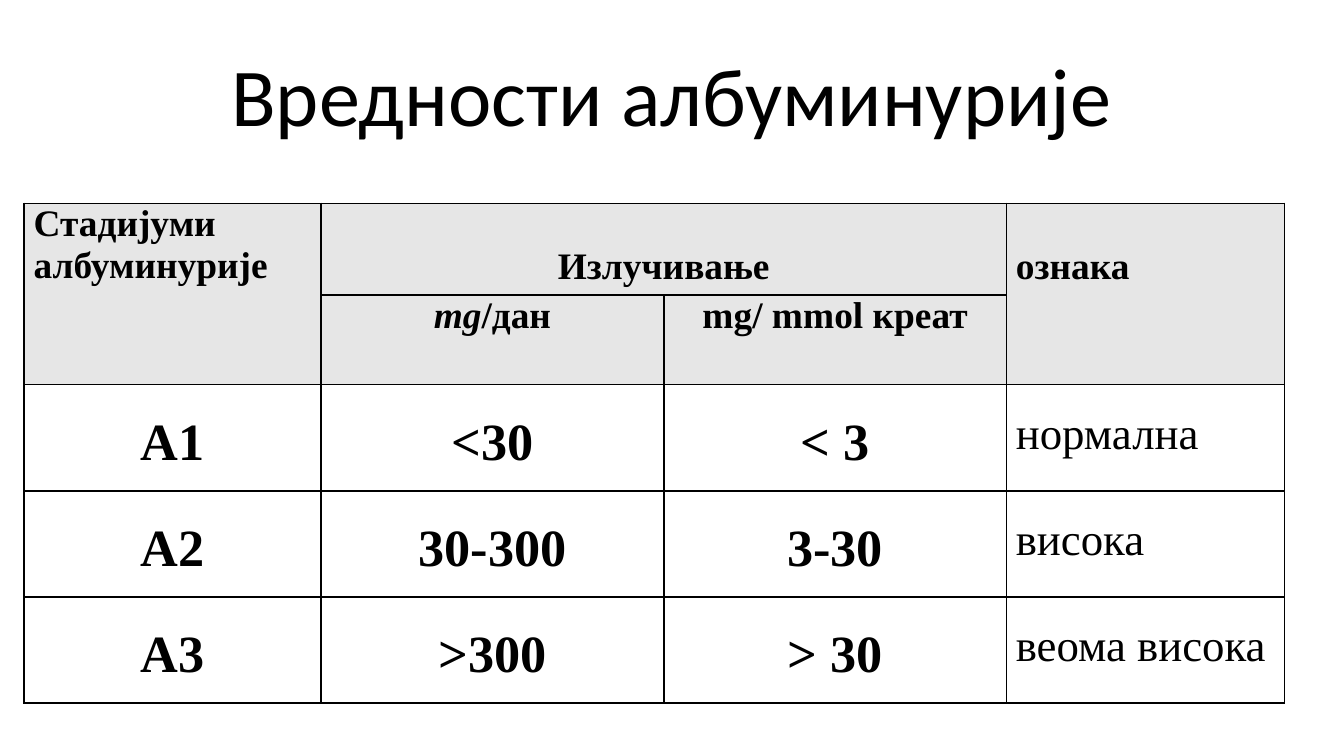
import pptx
import pptx.util
import pptx.dml.color
import pptx.enum.text
import pptx.oxml
import pptx.oxml.ns

Pt = pptx.util.Pt
ALIGN = pptx.enum.text.PP_ALIGN
ANCHOR = pptx.enum.text.MSO_ANCHOR
COLORS = {"ink": "000000", "header": "E6E6E6"}
HEADER_LINE = 23


def rgb(name):
    return pptx.dml.color.RGBColor.from_string(COLORS[name])


def write(para, text, *, font="Times New Roman", size=20, bold=False,
          italic=False, align=ALIGN.LEFT, spacing=None):
    """Append one formatted span to a paragraph."""
    para.alignment = align
    if spacing:
        para.line_spacing = spacing
    span = para.add_run()
    span.text = text
    span.font.name = font
    span.font.size = Pt(size)
    span.font.bold = bold
    span.font.italic = italic
    span.font.color.rgb = rgb("ink")


class SlideBuilder:
    def __init__(self, deck):
        self.slide = deck.slides.add_slide(deck.slide_layouts[6])
        self.border_width = Pt(1)
        self.side_margin = Pt(5)

    def title(self, text, left, top, width, height):
        box = self.slide.shapes.add_textbox(Pt(left), Pt(top), Pt(width), Pt(height))
        frame = box.text_frame
        frame.word_wrap = True
        frame.vertical_anchor = ANCHOR.MIDDLE
        write(frame.paragraphs[0], text, font="Calibri", size=44, align=ALIGN.CENTER)

    def table(self, left, top, widths, heights):
        frame = self.slide.shapes.add_table(
            len(heights), len(widths), Pt(left), Pt(top), Pt(sum(widths)), Pt(sum(heights)))
        table = frame.table
        table.first_row = table.horz_banding = False
        for column, width in zip(table.columns, widths):
            column.width = Pt(width)
        for row, height in zip(table.rows, heights):
            row.height = Pt(height)
        for cell in table.iter_cells():
            self.plain_cell(cell)
        return table

    def plain_cell(self, cell):
        """Give a cell its borders and margins, without a fill."""
        cell.margin_left = cell.margin_right = self.side_margin
        cell.margin_top = cell.margin_bottom = 0
        properties = cell._tc.get_or_add_tcPr()
        for side in ("lnL", "lnR", "lnT", "lnB"):
            properties.append(pptx.oxml.parse_xml(
                f'<a:{side} {pptx.oxml.ns.nsdecls("a")} w="{self.border_width}">'
                f'<a:solidFill><a:srgbClr val="{COLORS["ink"]}"/></a:solidFill>'
                f'</a:{side}>'))
        cell.fill.background()

    def header_cell(self, cell, spans, align=ALIGN.LEFT, margin_top=0):
        """Fill a header cell; spans are (text, italic) pairs."""
        cell.fill.solid()
        cell.fill.fore_color.rgb = rgb("header")
        cell.margin_top = Pt(margin_top)
        for text, italic in spans:
            write(cell.text_frame.paragraphs[0], text, bold=True, italic=italic, align=align)

    def body_row(self, table, row, values):
        *measures, label = values
        for column, text in enumerate(measures):
            write(table.cell(row, column).text_frame.paragraphs[0], text,
                  size=28, bold=True, align=ALIGN.CENTER, spacing=1.5)
        write(table.cell(row, len(measures)).text_frame.paragraphs[0], label,
              size=24, spacing=1.5)


def main():
    deck = pptx.Presentation()
    deck.slide_width, deck.slide_height = Pt(720), Pt(405)
    builder = SlideBuilder(deck)
    builder.title("Вредности албуминурије", 36, 16.5, 648, 67.5)

    table = builder.table(13, 109, [159, 183.6, 183.6, 149], [49, 48] + [56.9] * 3)
    table.cell(0, 0).merge(table.cell(1, 0))
    table.cell(0, 1).merge(table.cell(0, 2))
    table.cell(0, 3).merge(table.cell(1, 3))

    builder.header_cell(table.cell(0, 0), [("Стадијуми албуминурије", False)])
    builder.header_cell(table.cell(0, 1), [("Излучивање", False)], ALIGN.CENTER, HEADER_LINE)
    builder.header_cell(table.cell(0, 3), [("ознака", False)], margin_top=HEADER_LINE)
    builder.header_cell(table.cell(1, 1), [("mg", True), ("/дан", False)], ALIGN.CENTER)
    builder.header_cell(table.cell(1, 2), [("mg/ mmol креат", False)], ALIGN.CENTER)

    stages = [
        ("А1", "<30", "< 3", "нормална"),
        ("А2", "30-300", "3-30", "висока"),
        ("А3", ">300", "> 30", "веома висока"),
    ]
    for row, values in enumerate(stages, start=2):
        builder.body_row(table, row, values)

    deck.save("out.pptx")


if __name__ == "__main__":
    main()
